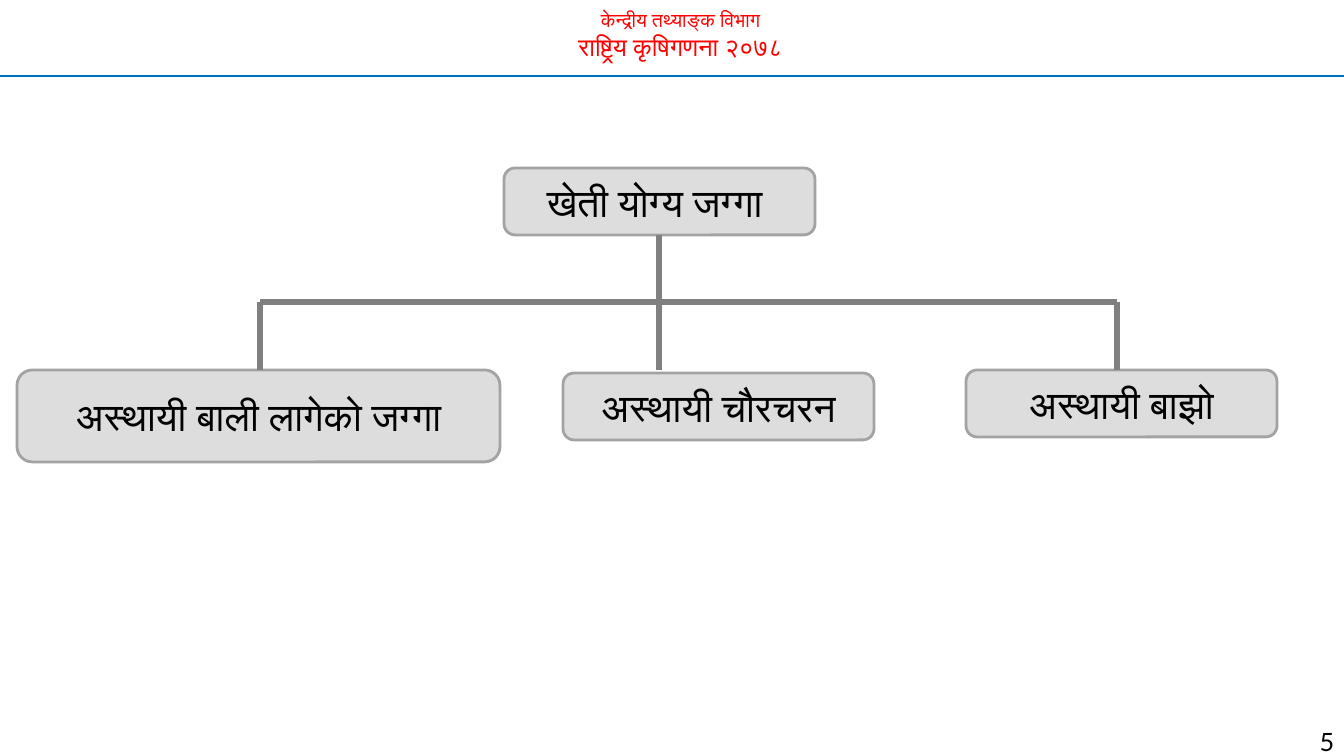
from dataclasses import dataclass

from lxml import etree
from pptx import Presentation
from pptx import util as u
from pptx.dml.color import RGBColor
from pptx.enum import shapes, text
from pptx.oxml import ns

EMU_PER_PX = 914400 / 100.8
SLIDE_W, SLIDE_H = 1344, 756


def px(length):
    return u.Emu(round(length * EMU_PER_PX))


@dataclass(frozen=True)
class Theme:
    heading: str = "FF0000"
    rule: str = "0070C0"
    box_fill: str = "DDDDDD"
    box_line: str = "A3A3A3"
    branch: str = "808080"
    ink: str = "000000"
    heading_font: str = "Calibri"
    box_font: str = "Roboto"
    number_font: str = "Lato"
    office_size: int = 14
    census_size: int = 18
    box_size: int = 28
    number_size: int = 18
    rule_width: float = 1.5
    box_width: float = 2
    branch_width: float = 4


class SlideBuilder:
    def __init__(self, slide, theme):
        self.slide = slide
        self.theme = theme

    def style(self, paragraph, font, size, color, align):
        paragraph.alignment = align
        for run in paragraph.runs:
            run.font.name = font
            run.font.size = u.Pt(size)
            run.font.color.rgb = RGBColor.from_string(color)

    def heading(self, lines, left, top, width, height):
        """Fill the title placeholder; lines holds (wording, size) pairs."""
        title = self.slide.shapes.title
        title.left, title.top = px(left), px(top)
        title.width, title.height = px(width), px(height)
        frame = title.text_frame
        frame.text = "\n".join(wording for wording, _ in lines)
        frame.word_wrap = True
        frame.auto_size = text.MSO_AUTO_SIZE.NONE
        frame.vertical_anchor = text.MSO_ANCHOR.TOP
        for paragraph, (_, size) in zip(frame.paragraphs, lines):
            self.style(paragraph, self.theme.heading_font, size,
                       self.theme.heading, text.PP_ALIGN.CENTER)

    def land_box(self, wording, left, top, width, height):
        box = self.slide.shapes.add_shape(
            shapes.MSO_SHAPE.ROUNDED_RECTANGLE,
            px(left), px(top), px(width), px(height))
        box.shadow.inherit = False
        box.fill.solid()
        box.fill.fore_color.rgb = RGBColor.from_string(self.theme.box_fill)
        box.line.color.rgb = RGBColor.from_string(self.theme.box_line)
        box.line.width = u.Pt(self.theme.box_width)
        frame = box.text_frame
        frame.text = wording
        frame.word_wrap = True
        frame.vertical_anchor = text.MSO_ANCHOR.MIDDLE
        self.style(frame.paragraphs[0], self.theme.box_font, self.theme.box_size,
                   self.theme.ink, text.PP_ALIGN.CENTER)

    def line(self, x1, y1, x2, y2, color, width):
        connector = self.slide.shapes.add_connector(
            shapes.MSO_CONNECTOR.STRAIGHT, px(x1), px(y1), px(x2), px(y2))
        connector.line.color.rgb = RGBColor.from_string(color)
        connector.line.width = u.Pt(width)
        etree.SubElement(connector._element.spPr, ns.qn("a:effectLst"))

    def branch(self, x1, y1, x2, y2):
        self.line(x1, y1, x2, y2, self.theme.branch, self.theme.branch_width)

    def page_number(self, number, left, top, width, height):
        label = self.slide.shapes.add_textbox(px(left), px(top), px(width), px(height))
        frame = label.text_frame
        frame.text = str(number)
        frame.word_wrap = True
        frame.paragraphs[0].line_spacing = 1.5
        self.style(frame.paragraphs[0], self.theme.number_font,
                   self.theme.number_size, self.theme.ink, text.PP_ALIGN.RIGHT)


def main():
    deck = Presentation()
    deck.slide_width, deck.slide_height = px(SLIDE_W), px(SLIDE_H)
    title_only = deck.slide_layouts.get_by_name("Title Only")
    theme = Theme()
    page = SlideBuilder(deck.slides.add_slide(title_only), theme)

    page.heading([("केन्द्रीय तथ्याङ्क विभाग", theme.office_size),
                  ("राष्ट्रिय कृषिगणना २०७८", theme.census_size)], 121, 3, 1119, 64)
    page.line(0, 76, SLIDE_W, 76, theme.rule, theme.rule_width)

    box_w, box_h = 311, 67
    root_top, bar_y, leaf_top = 168, 302, 370
    page.land_box("खेती योग्य जग्गा ", 504, root_top, box_w, box_h)
    page.land_box("अस्थायी बाली लागेको जग्गा", 17, leaf_top, 483, 92)
    page.land_box("अस्थायी चौरचरन", 563, leaf_top + 3, box_w, box_h)
    page.land_box("अस्थायी बाझो", 966, leaf_top, box_w, box_h)

    crop_x, pasture_x, fallow_x = 260, 659, 1117
    page.branch(pasture_x, root_top + box_h, pasture_x, bar_y)
    page.branch(crop_x, bar_y, fallow_x, bar_y)
    for drop_x in (crop_x, pasture_x, fallow_x):
        page.branch(drop_x, bar_y, drop_x, leaf_top)

    page.page_number(5, 1240, 706, 104, 42)
    deck.save("out.pptx")


if __name__ == "__main__":
    main()
